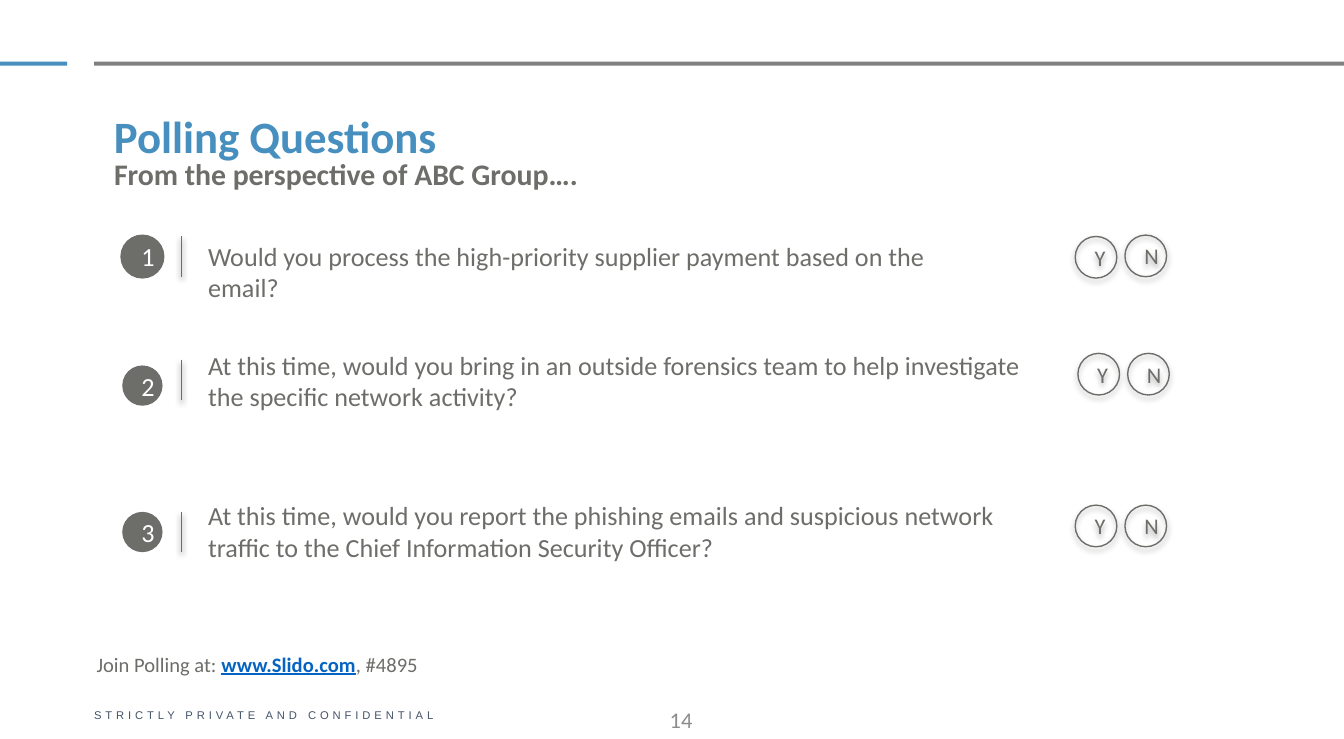
from dataclasses import dataclass

from lxml.etree import SubElement
from pptx import Presentation
from pptx.dml.color import RGBColor
from pptx.enum.shapes import MSO_CONNECTOR as Connector, MSO_SHAPE as Shape
from pptx.enum.text import MSO_ANCHOR as Anchor, PP_ALIGN as Align
from pptx.oxml.ns import qn
from pptx.util import Pt

PX = 9144  # EMU per px, at 100 px to the inch
BLUE = RGBColor(0x47, 0x8F, 0xBF)
RULE_GRAY = RGBColor(0x80, 0x80, 0x80)
TEXT_GRAY = RGBColor(0x6D, 0x6E, 0x6A)
PAGE_GRAY = RGBColor(0x8C, 0x8C, 0x8C)
NAVY = RGBColor(0x44, 0x54, 0x6A)
LINK_BLUE = RGBColor(0x05, 0x63, 0xC1)
WHITE = RGBColor(0xFF, 0xFF, 0xFF)

BODY = {"name": "Calibri", "size": Pt(14)}
SMALL = BODY | {"size": Pt(12)}
TITLE = BODY | {"size": Pt(24), "bold": True}
SUBTITLE = BODY | {"size": Pt(16), "bold": True}
JOIN = BODY | {"size": Pt(11)}
LINK = JOIN | {"bold": True, "underline": True}
FOOTER = {"name": "Arial", "size": Pt(6)}

BADGE_LEFT, BADGE_SIZE = 91, 30
DIVIDER_X, DIVIDER_HEIGHT = 135, 30
QUESTION_LEFT, QUESTION_HEIGHT = 145, 57
ANSWER_SIZE, ANSWER_STEP = 31, 37


@dataclass(frozen=True)
class Box:
    left: int
    top: int
    width: int
    height: int

    def emu(self) -> list[int]:
        return [v * PX for v in (self.left, self.top, self.width, self.height)]


@dataclass(frozen=True)
class Question:
    text: str
    text_top: int
    text_width: int
    divider_top: int
    badge_top: int
    answer_left: int
    answer_tops: tuple[int, int]


QUESTIONS = [
    Question("Would you process the high-priority supplier payment based on the email?",
             174, 600, 176, 176, 800, (176, 175)),
    Question("At this time, would you bring in an outside forensics team to help "
             "investigate the specific network activity?",
             255, 655, 268, 272, 802, (263, 263)),
    Question("At this time, would you report the phishing emails and suspicious "
             "network traffic to the Chief Information Security Officer?",
             367, 636, 381, 381, 800, (376, 376)),
]


def add_run(p, text: str, fmt: dict, color: RGBColor):
    r = p.add_run()
    r.text = text
    for key, value in fmt.items():
        setattr(r.font, key, value)
    r.font.color.rgb = color
    return r


def add_text(slide, box: Box, text: str, fmt: dict, color: RGBColor, anchor=Anchor.TOP):
    tf = slide.shapes.add_textbox(*box.emu()).text_frame
    tf.word_wrap = True
    tf.vertical_anchor = anchor
    add_run(tf.paragraphs[0], text, fmt, color)
    return tf


def add_shape(slide, kind: Shape, box: Box, fill: RGBColor | None, line: RGBColor | None = None):
    s = slide.shapes.add_shape(kind, *box.emu())
    s.shadow.inherit = False
    if fill is None:
        s.fill.background()
    else:
        s.fill.solid()
        s.fill.fore_color.rgb = fill
    if line is None:
        s.line.fill.background()
    else:
        s.line.color.rgb = line
        s.line.width = Pt(0.75)
    return s


def add_shadow(s, opacity: int, distance: float) -> None:
    """Give the shape a soft black shadow straight below it."""
    sp_pr = s._element.spPr
    effects = sp_pr.find(qn("a:effectLst"))
    if effects is None:
        effects = SubElement(sp_pr, qn("a:effectLst"))
    shadow = SubElement(effects, qn("a:outerShdw"), blurRad=str(Pt(3.1)),
                        dist=str(Pt(distance)), dir="5400000", rotWithShape="0")
    color = SubElement(shadow, qn("a:srgbClr"), val="000000")
    SubElement(color, qn("a:alpha"), val=str(opacity * 1000))


def add_circle(slide, box: Box, label: str, fmt: dict, color: RGBColor,
               fill: RGBColor | None, line: RGBColor | None = None):
    s = add_shape(slide, Shape.OVAL, box, fill, line)
    tf = s.text_frame
    tf.word_wrap = True
    tf.vertical_anchor = Anchor.MIDDLE
    p = tf.paragraphs[0]
    p.alignment = Align.CENTER
    add_run(p, label, fmt, color)
    return s


def add_divider(slide, top: int) -> None:
    x = DIVIDER_X * PX
    s = slide.shapes.add_connector(Connector.STRAIGHT, x, top * PX,
                                   x, (top + DIVIDER_HEIGHT) * PX)
    s.line.color.rgb = TEXT_GRAY
    s.line.width = Pt(1)
    add_shadow(s, 38, 1.6)


def add_question(slide, number: int, q: Question) -> None:
    for i, (label, top) in enumerate(zip("YN", q.answer_tops)):
        box = Box(q.answer_left + i * ANSWER_STEP, top, ANSWER_SIZE, ANSWER_SIZE)
        s = add_circle(slide, box, label, SMALL, TEXT_GRAY, None, TEXT_GRAY)
        add_shadow(s, 35, 1.8)
    tf = add_text(slide, Box(QUESTION_LEFT, q.text_top, q.text_width, QUESTION_HEIGHT),
                  q.text, BODY, TEXT_GRAY)
    tf.paragraphs[0].space_after = Pt(3)
    add_divider(slide, q.divider_top)
    badge = add_circle(slide, Box(BADGE_LEFT, q.badge_top, BADGE_SIZE, BADGE_SIZE),
                       str(number), BODY, WHITE, TEXT_GRAY)
    if number == 1:
        badge.line.color.rgb = TEXT_GRAY
        badge.line.width = Pt(2)


def add_footer(slide) -> None:
    tf = add_text(slide, Box(70, 522, 306, 20), "STRICTLY PRIVATE AND CONFIDENTIAL",
                  FOOTER, NAVY, Anchor.MIDDLE)
    for side in ("left", "top", "right", "bottom"):
        setattr(tf, f"margin_{side}", 0)
    p = tf.paragraphs[0]
    p.line_spacing = 1.1
    p.runs[0].font._element.set("spc", "210")

    tf = add_text(slide, Box(300, 521, 225, 29), "14", SMALL, PAGE_GRAY, Anchor.MIDDLE)
    tf.paragraphs[0].alignment = Align.RIGHT


def add_join_note(slide) -> None:
    s = add_shape(slide, Shape.RECTANGLE, Box(62, 480, 328, 29), None, WHITE)
    tf = s.text_frame
    tf.word_wrap = True
    tf.vertical_anchor = Anchor.TOP
    p = tf.paragraphs[0]
    p.alignment = Align.LEFT
    add_run(p, "Join Polling at: ", JOIN, TEXT_GRAY)
    add_run(p, "www.Slido.com", LINK, LINK_BLUE)
    add_run(p, ", #4895", JOIN, TEXT_GRAY)


def main() -> None:
    prs = Presentation()
    prs.slide_width, prs.slide_height = 1000 * PX, 550 * PX
    slide = prs.slides.add_slide(prs.slide_layouts[6])

    add_shape(slide, Shape.RECTANGLE, Box(0, 46, 50, 3), BLUE)
    add_shape(slide, Shape.RECTANGLE, Box(70, 46, 930, 3), RULE_GRAY)
    add_text(slide, Box(75, 111, 489, 37), "From the perspective of ABC Group….",
             SUBTITLE, TEXT_GRAY)
    for number, question in enumerate(QUESTIONS, start=1):
        add_question(slide, number, question)
    title = add_text(slide, Box(75, 72, 847, 40), "Polling Questions", TITLE, BLUE)
    title.paragraphs[0].line_spacing = 1.1
    add_join_note(slide)
    add_footer(slide)
    prs.save("out.pptx")


if __name__ == "__main__":
    main()
